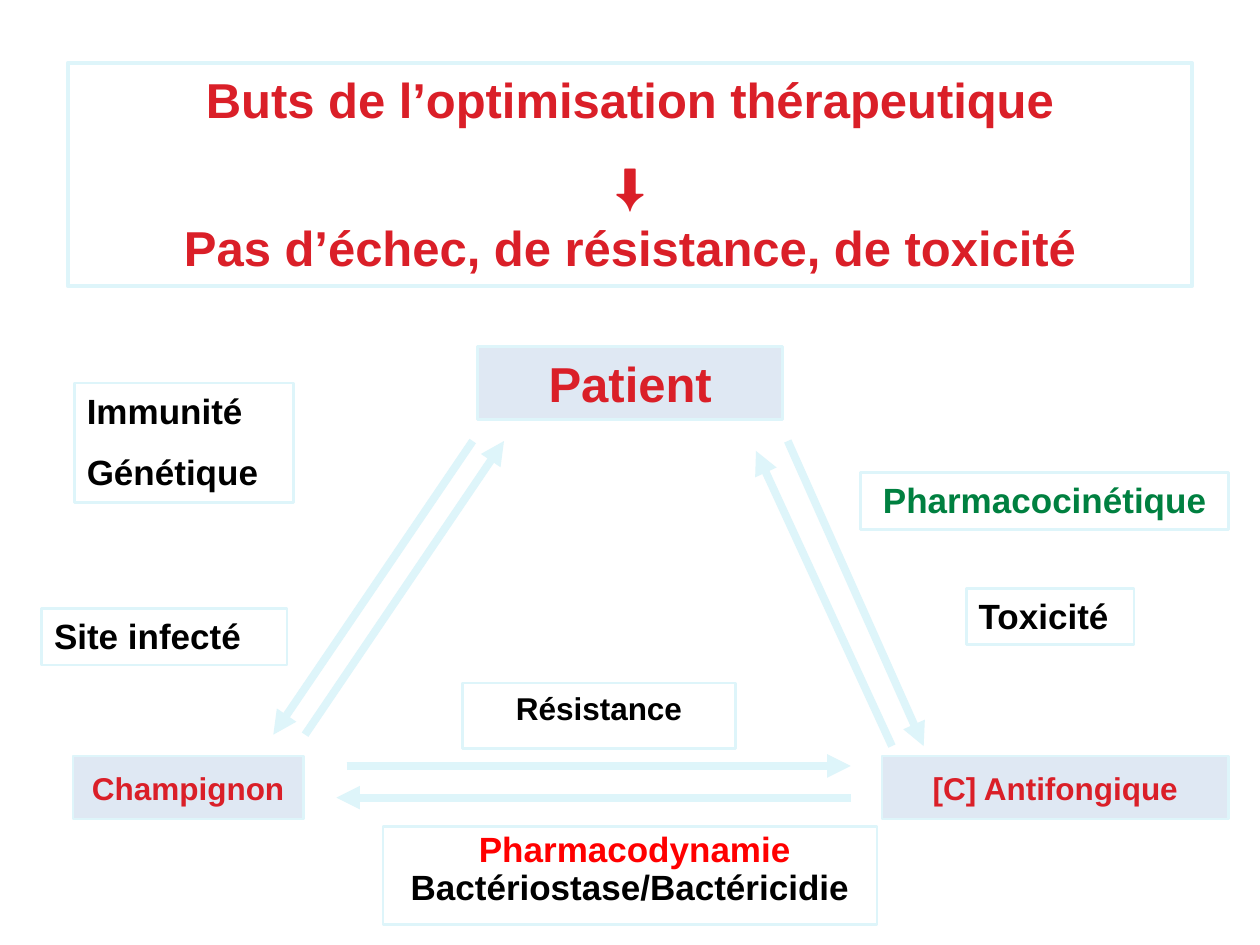
from lxml import etree
from pptx import Presentation
from pptx.dml.color import RGBColor
from pptx.enum.shapes import MSO_CONNECTOR, MSO_SHAPE
from pptx.enum.text import MSO_ANCHOR, PP_ALIGN
from pptx.oxml.ns import qn
from pptx.util import Cm, Pt

RECT = MSO_SHAPE.RECTANGLE
STRAIGHT = MSO_CONNECTOR.STRAIGHT
TOP, MIDDLE = MSO_ANCHOR.TOP, MSO_ANCHOR.MIDDLE
LEFT, CENTER = PP_ALIGN.LEFT, PP_ALIGN.CENTER
PALE, TINT, RED, BLACK = "DEF5FA", "DFE8F3", "DA1F28", "000000"


def paint(color, code):
    color.rgb = RGBColor.from_string(code)


def add_box(place, lines, size, code, align=CENTER, fill=None, width=1.5):
    box = slide.shapes.add_shape(RECT, *map(Cm, place))
    box.shadow.inherit = False
    paint(box.line.color, PALE)
    box.line.width = Pt(width)
    if fill:
        box.fill.solid()
        paint(box.fill.fore_color, fill)
    else:
        box.fill.background()
    frame = box.text_frame
    frame.word_wrap = not fill
    frame.vertical_anchor = MIDDLE if fill else TOP
    for i, line in enumerate(lines):
        para = frame.paragraphs[0] if i == 0 else frame.add_paragraph()
        para.alignment = align
        para.font.name = "Arial"
        para.font.bold = True
        para.font.size = Pt(size)
        paint(para.font.color, code)
        if i:
            para.space_before = Pt(round(size * 0.56))
        para.add_run().text = line
    return frame


deck = Presentation()
deck.slide_width, deck.slide_height = Cm(25.4), Cm(19.05)
slide = deck.slides.add_slide(deck.slide_layouts[6])

title = add_box(
    (1.37, 1.27, 22.66, 4.5),
    ["Buts de l’optimisation thérapeutique", "⬇", "Pas d’échec, de résistance, de toxicité"],
    28, RED, width=2.25)
title.paragraphs[2].line_spacing = 0.5

add_box((1.5, 7.72, 4.42, 2.41), ["Immunité", "Génétique"], 20, BLACK, LEFT)
add_box((9.32, 13.77, 5.51, 1.32), ["Résistance"], 18, BLACK)

effect = add_box((7.72, 16.66, 9.96, 1.98), [" Pharmacodynamie "], 20, "FF0000")
para = effect.paragraphs[0]
para.line_spacing = 0.9
run = para.add_run()
run.text = "Bactériostase/Bactéricidie"
paint(run.font.color, BLACK)

add_box((0.84, 12.27, 4.95, 1.14), ["Site infecté"], 20, BLACK, LEFT)
add_box((17.35, 9.53, 7.42, 1.14), ["Pharmacocinétique"], 20, "008040")
add_box((19.48, 11.86, 3.38, 1.14), ["Toxicité"], 20, BLACK, LEFT)

for place, label, size in [
    ((9.63, 6.99, 6.15, 1.47), "Patient", 28),
    ((17.78, 15.24, 6.99, 1.27), "[C] Antifongique", 18),
    ((1.47, 15.24, 4.65, 1.27), "Champignon", 18),
]:
    add_box(place, [label], size, RED, fill=TINT)

for ends in [
    (6.99, 15.44, 17.15, 15.44),
    (17.15, 16.08, 6.78, 16.08),
    (9.53, 8.89, 5.51, 14.81),
    (6.15, 14.81, 10.16, 8.89),
    (17.98, 15.04, 15.24, 9.09),
    (15.88, 8.89, 18.62, 15.04),
]:
    arrow = slide.shapes.add_connector(STRAIGHT, *map(Cm, ends))
    paint(arrow.line.color, PALE)
    arrow.line.width = Pt(4.5)
    props = arrow.element.spPr
    etree.SubElement(props.find(qn("a:ln")), qn("a:tailEnd"), type="triangle")
    etree.SubElement(props, qn("a:effectLst"))

deck.save("out.pptx")
